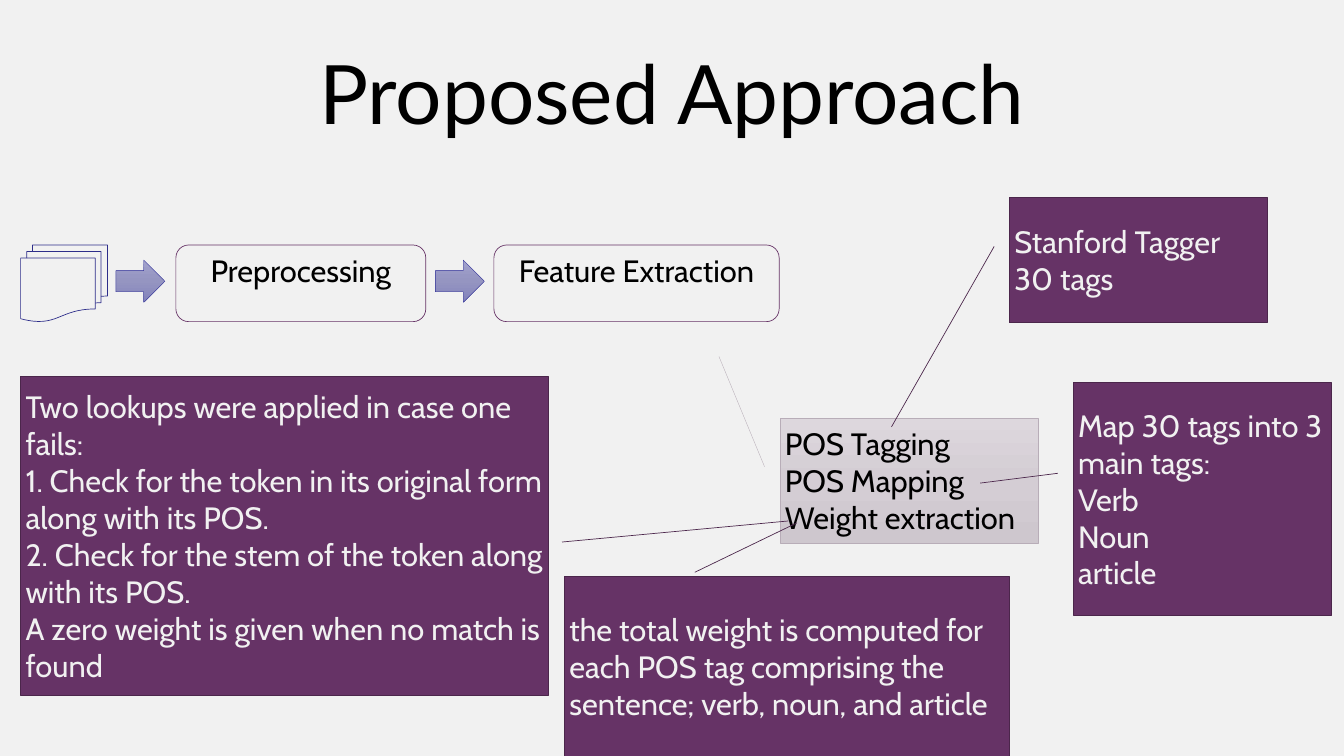
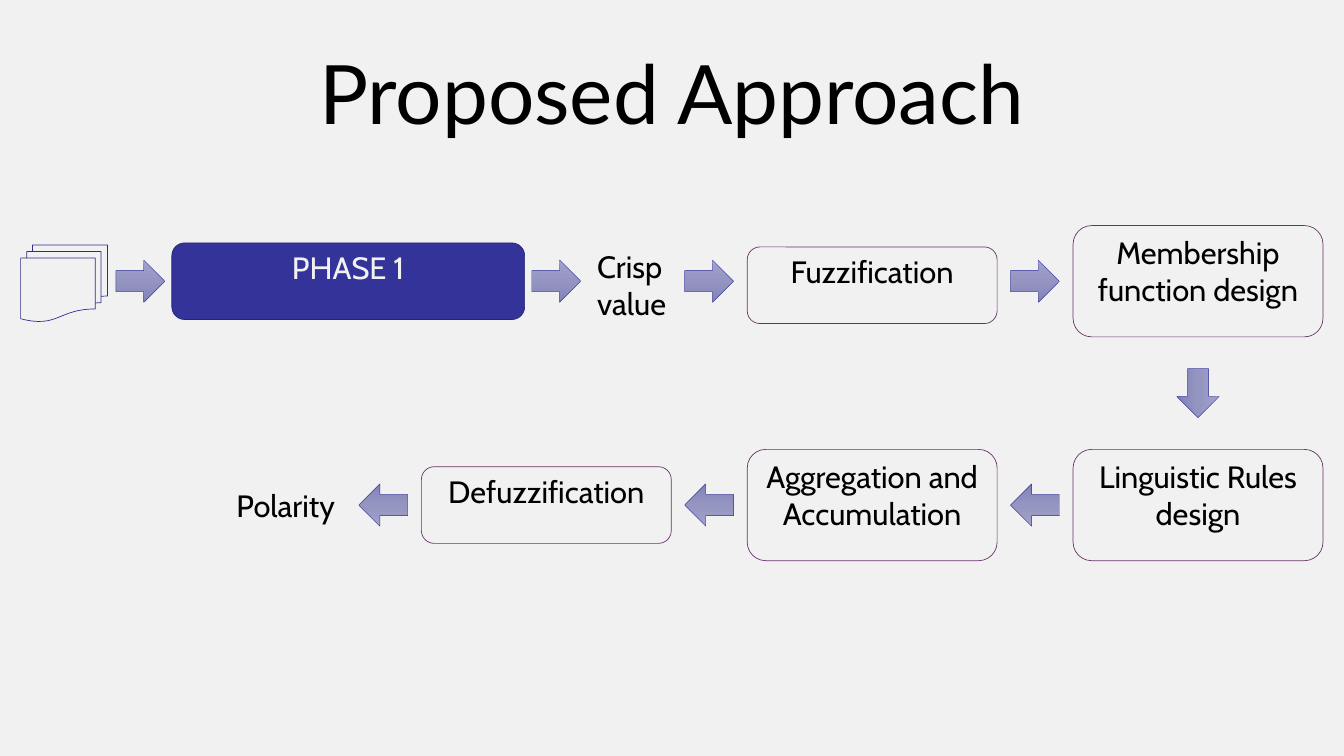
"""Build two slides that show the proposed approach as a process flow."""
from dataclasses import dataclass

from lxml import etree
from pptx import Presentation
from pptx.dml.color import RGBColor
from pptx.enum.shapes import MSO_SHAPE
from pptx.enum.text import MSO_ANCHOR, MSO_AUTO_SIZE, PP_ALIGN
from pptx.oxml.ns import qn
from pptx.util import Pt

ARROW = MSO_SHAPE.RIGHT_ARROW
DOCUMENTS = MSO_SHAPE.FLOWCHART_MULTIDOCUMENT
ROUNDED = MSO_SHAPE.ROUNDED_RECTANGLE
CALLOUT = MSO_SHAPE.LINE_CALLOUT_1
TOP, MIDDLE = MSO_ANCHOR.TOP, MSO_ANCHOR.MIDDLE
LEFT, CENTER = PP_ALIGN.LEFT, PP_ALIGN.CENTER
NO_FIT, GROW = MSO_AUTO_SIZE.NONE, MSO_AUTO_SIZE.SHAPE_TO_FIT_TEXT


@dataclass(frozen=True)
class Style:
    """Fill colours, outline and text colour of a kind of shape."""
    fills: tuple
    line: str
    width: float = 1
    text: str = "000000"


@dataclass(frozen=True)
class Theme:
    """Colours, fonts and type sizes shared by the slides."""
    background: str = "F1F1F1"
    ink: str = "000000"
    title_font: str = "Lato"
    title_size: float = 117
    body_font: str = "Cabin"
    body_size: float = 44
    arrow: Style = Style(("A1A1CC", "9595C1", "8181BB"), "333399", 0.5)
    documents: Style = Style(("F1F1F1",), "2D2D8A")
    step: Style = Style(("F1F1F1",), "663366")
    phase: Style = Style(("333399",), "262671", text="F1F1F1")
    tasks: Style = Style(("DDD7DD", "D4CDD4", "CEC7CE"), "B8ADB8", 0.5)
    note: Style = Style(("663366",), "4B264B", text="F1F1F1")


THEME = Theme()
TITLE = "Proposed Approach"
SLIDE_SIZE = (1920, 1080)
TITLE_BOX = (131.75, 57.6, 1656, 208.8)
DOCUMENTS_BOX = (29.5, 350, 124, 109.5)
ARROW_WIDTH, ARROW_HEIGHT = 70, 60.5
STEP_WIDTH, SHORT, TALL = 357, 109.5, 159
CALLOUT_WIDTH, CALLOUT_HEIGHT = 368.6, 178.6
ROWS = (401.75, 721.5)
COLUMNS = [602 + 465.5 * index for index in range(3)]
COLUMN_ARROWS = [column - 89.5 for column in COLUMNS]
FIRST_ARROW = 165.6

EXTRACTION_STEPS = [
    ("Preprocessing", 251.3, 404.75, STEP_WIDTH, SHORT, THEME.step),
    ("Feature Extraction", 705.6, 404.75, 407.5, SHORT, THEME.step),
]
EXTRACTION_ARROWS = [(FIRST_ARROW, ROWS[0], 0), (622, ROWS[0], 0)]
CALLOUTS = [
    (("POS Tagging", "POS Mapping", "Weight extraction"),
     (1114, 597, CALLOUT_WIDTH, CALLOUT_HEIGHT),
     (0.391, -0.059, -0.492, -0.236), THEME.tasks),
    (("Stanford Tagger", "30 tags"),
     (1442, 282.2, CALLOUT_WIDTH, CALLOUT_HEIGHT),
     (0.391, -0.059, 1.834, -0.457), THEME.note),
    (("Map 30 tags into 3 main tags:", "Verb", "Noun", "article"),
     (1533, 545.8, CALLOUT_WIDTH, 333.4),
     (0.391, -0.059, 0.433, -0.36), THEME.note),
    (("Two lookups were applied in case one fails:",
      "1. Check for the token in its original form along with its POS.",
      "2. Check for the stem of the token along with its POS.",
      "A zero weight is given when no match is found"),
     (29.5, 537.8, 753.8, 455.8),
     (0.453, 1.455, 0.519, 1.026), THEME.note),
    (("the total weight is computed for each POS tag comprising the "
      "sentence; verb, noun, and article",),
     (806.4, 823.7, 635.8, 256.3),
     (-0.299, 0.522, -0.024, 0.293), THEME.note),
]

FUZZY_STEPS = [
    ("PHASE 1", 245.5, ROWS[0], 504, SHORT, THEME.phase),
    ("Fuzzification", COLUMNS[1], 407.5, STEP_WIDTH, SHORT, THEME.step),
    ("Membership function design", COLUMNS[2], ROWS[0], STEP_WIDTH, TALL, THEME.step),
    ("Linguistic Rules design", COLUMNS[2], ROWS[1], STEP_WIDTH, TALL, THEME.step),
    ("Aggregation and Accumulation", COLUMNS[1], ROWS[1], STEP_WIDTH, TALL, THEME.step),
    ("Defuzzification", COLUMNS[0], ROWS[1], STEP_WIDTH, SHORT, THEME.step),
]
FUZZY_ARROWS = [
    *[(left, ROWS[0], 0) for left in (FIRST_ARROW, 759.6, *COLUMN_ARROWS[1:])],
    (COLUMNS[2] + (STEP_WIDTH - ARROW_WIDTH) / 2, sum(ROWS) / 2, 90),
    *[(left, ROWS[1], 180) for left in reversed(COLUMN_ARROWS)],
]
FUZZY_LABELS = [
    ("Crisp value", (846, 350, 125.3, 113.8)),
    ("Polarity", (330.5, 691.2, 162.7, 60.5)),
]


def points(box):
    """Turn a box of numbers into lengths in points."""
    return [Pt(value) for value in box]


def set_text(shape, *paragraphs, font=THEME.body_font, size=THEME.body_size,
             color=THEME.ink, align=LEFT, anchor=TOP, fit=NO_FIT):
    """Fill a shape with formatted paragraphs."""
    frame = shape.text_frame
    frame.word_wrap = True
    frame.auto_size = fit
    frame.vertical_anchor = anchor
    for index, text in enumerate(paragraphs):
        paragraph = frame.add_paragraph() if index else frame.paragraphs[0]
        paragraph.alignment = align
        run = paragraph.add_run()
        run.text = text
        run.font.name = font
        run.font.size = Pt(size)
        run.font.color.rgb = RGBColor.from_string(color)


def set_gradient(shape, colors):
    """Give a shape a top-to-bottom gradient with evenly spaced stops."""
    shape.fill.solid()
    solid = shape.fill._xPr.find(qn("a:solidFill"))
    gradient = etree.Element(qn("a:gradFill"), rotWithShape="1")
    stops = etree.SubElement(gradient, qn("a:gsLst"))
    for index, color in enumerate(colors):
        position = 100000 * index // (len(colors) - 1)
        stop = etree.SubElement(stops, qn("a:gs"), pos=str(position))
        etree.SubElement(stop, qn("a:srgbClr"), val=color)
    etree.SubElement(gradient, qn("a:lin"), ang="5400000", scaled="0")
    solid.getparent().replace(solid, gradient)


def add_styled_shape(slide, preset, box, style):
    """Add a preset shape with the fill and outline of its style."""
    shape = slide.shapes.add_shape(preset, *points(box))
    shape.shadow.inherit = False
    if len(style.fills) > 1:
        set_gradient(shape, style.fills)
    else:
        shape.fill.solid()
        shape.fill.fore_color.rgb = RGBColor.from_string(style.fills[0])
    shape.line.color.rgb = RGBColor.from_string(style.line)
    shape.line.width = Pt(style.width)
    return shape


def add_flow_slide(presentation, steps, arrows):
    """Add a titled slide with source documents, steps and arrows."""
    slide = presentation.slides.add_slide(presentation.slide_layouts[5])
    title = slide.shapes.title
    title.left, title.top, title.width, title.height = points(TITLE_BOX)
    set_text(title, TITLE, font=THEME.title_font, size=THEME.title_size, align=CENTER)
    add_styled_shape(slide, DOCUMENTS, DOCUMENTS_BOX, THEME.documents)
    for text, left, middle, width, height, style in steps:
        box = (left, middle - height / 2, width, height)
        step = add_styled_shape(slide, ROUNDED, box, style)
        set_text(step, text, color=style.text, align=CENTER)
    for left, middle, rotation in arrows:
        box = (left, middle - ARROW_HEIGHT / 2, ARROW_WIDTH, ARROW_HEIGHT)
        add_styled_shape(slide, ARROW, box, THEME.arrow).rotation = rotation
    return slide


def add_callouts(slide):
    """Add the task list and the notes that explain it."""
    for paragraphs, box, leader, style in CALLOUTS:
        callout = add_styled_shape(slide, CALLOUT, box, style)
        for index, value in enumerate(leader):
            callout.adjustments[index] = value
        set_text(callout, *paragraphs, color=style.text, anchor=MIDDLE)


def main():
    """Build and save the presentation."""
    presentation = Presentation()
    presentation.slide_width, presentation.slide_height = points(SLIDE_SIZE)
    background = presentation.slide_master.background.fill
    background.solid()
    background.fore_color.rgb = RGBColor.from_string(THEME.background)
    add_callouts(add_flow_slide(presentation, EXTRACTION_STEPS, EXTRACTION_ARROWS))
    fuzzy_slide = add_flow_slide(presentation, FUZZY_STEPS, FUZZY_ARROWS)
    for text, box in FUZZY_LABELS:
        set_text(fuzzy_slide.shapes.add_textbox(*points(box)), text, fit=GROW)
    presentation.save("out.pptx")


if __name__ == "__main__":
    main()
